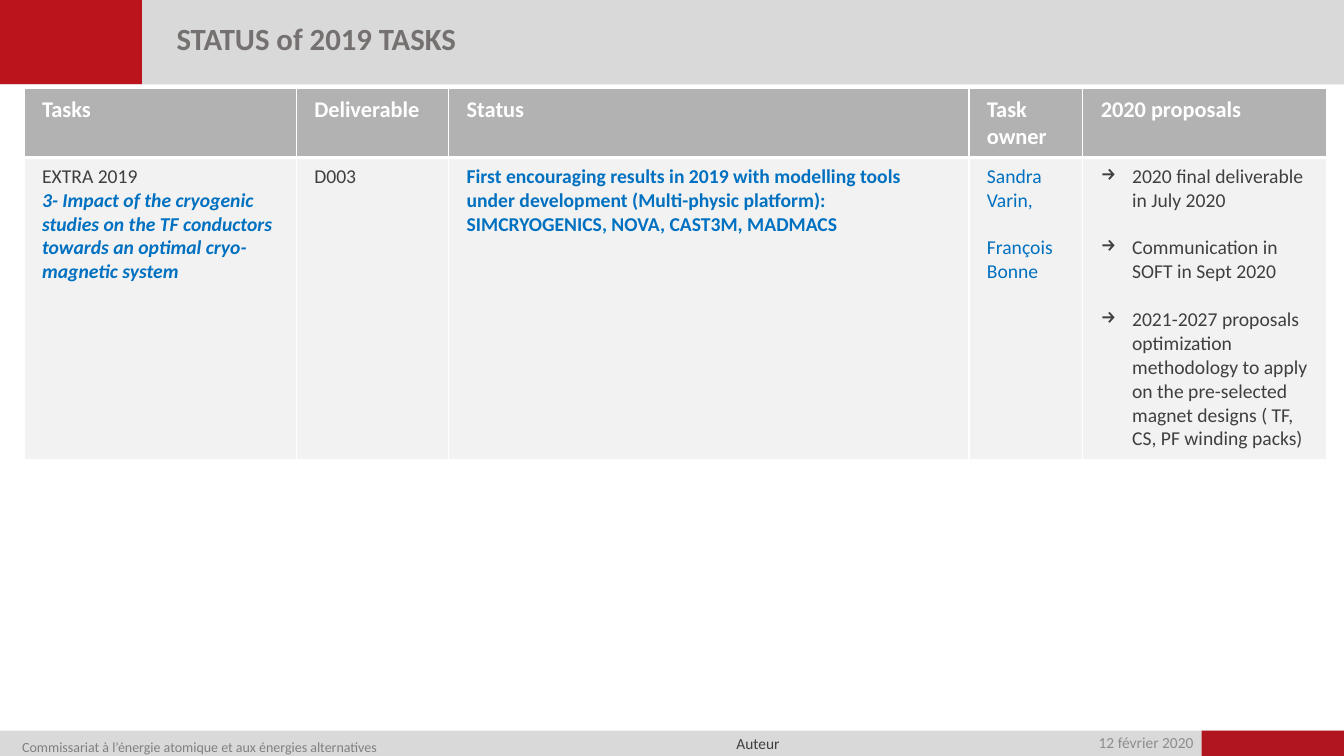
"""Build the status slide for the 2019 tasks."""
from dataclasses import dataclass, field
from typing import Any

from lxml.etree import SubElement
from pptx import Presentation
from pptx.dml.color import RGBColor
from pptx.enum.shapes import MSO_SHAPE as Preset
from pptx.enum.text import MSO_ANCHOR as Anchor, PP_ALIGN as Align
from pptx.oxml import parse_xml
from pptx.oxml.ns import nsdecls, qn
from pptx.util import Cm, Pt

FONT = "Calibri"
WIDTH = 33.87
FOOTER_TOP = 18.41
FOOTER_HEIGHT = 0.66
GREY, DARK, BLUE, WHITE = "D9D9D9", "3F3F3F", "0070C0", "FFFFFF"
COLUMN_WIDTHS = [6.86, 3.84, 13.11, 2.87, 6.15]
ROW_HEIGHTS = [1.73, 7.6]
BLANK_LINE = 17.1


@dataclass
class Para:
    text: str
    size: float = 14
    color: str = DARK
    font: dict[str, Any] = field(default_factory=dict)
    layout: dict[str, Any] = field(default_factory=dict)
    bullet: str = ""


@dataclass
class Bar:
    left: float
    top: float
    width: float
    height: float
    color: str


@dataclass
class Label:
    left: float
    top: float
    width: float
    height: float
    para: Para
    margins: tuple[float, float] = (0.2, 0)
    frame: dict[str, Any] = field(default_factory=dict)


BARS = [
    Bar(0, FOOTER_TOP, WIDTH, FOOTER_HEIGHT, GREY),
    Bar(0, 0, WIDTH, 2.13, GREY),
    Bar(30.28, FOOTER_TOP, 3.59, FOOTER_HEIGHT, "B1151F"),
    Bar(0, 0, 3.58, 2.12, "BC141C"),
]

LABELS = [
    Label(24.41, 18.52, 5.87, 0.43,
          Para("12 février 2020", 11, "8C8C8C",
               layout={"alignment": Align.RIGHT, "line_spacing": 0.9})),
    Label(0.36, 18.44, 15.32, 0.53,
          Para("Commissariat à l’énergie atomique et aux énergies alternatives",
               10, "808080", layout={"line_spacing": 1.4})),
    Label(18.36, 18.49, 1.5, 0.48, Para("Auteur", 11), frame={"word_wrap": False}),
    Label(4.09, 0.53, 16.31, 1.04,
          Para("STATUS of 2019 TASKS", 22, "767171", {"bold": True},
               {"line_spacing": 0.8}),
          (0.36, 0.13), {"vertical_anchor": Anchor.MIDDLE}),
]

HEADINGS = ["Tasks", "Deliverable", "Status", "Task owner", "2020 proposals"]
PROPOSALS = [
    "2020 final deliverable in July 2020",
    "Communication in SOFT in Sept 2020",
    "2021-2027 proposals optimization methodology to apply on the pre-selected "
    "magnet designs ( TF, CS, PF winding packs)",
]
GAP_ABOVE = {"space_before": Pt(BLANK_LINE)}

ROWS = [
    [[Para(heading, 16, WHITE, {"bold": True})] for heading in HEADINGS],
    [
        [Para("EXTRA 2019"),
         Para("3- Impact of the cryogenic studies on the TF conductors towards "
              "an optimal cryo-magnetic system", color=BLUE,
              font={"bold": True, "italic": True})],
        [Para("D003")],
        [Para("First encouraging results in 2019 with modelling tools under "
              "development (Multi-physic platform): SIMCRYOGENICS, NOVA, "
              "CAST3M, MADMACS", color=BLUE, font={"bold": True})],
        [Para("Sandra Varin,", color=BLUE),
         Para("François Bonne", color=BLUE, layout=GAP_ABOVE)],
        [Para(text, layout=GAP_ABOVE if index else {}, bullet="→")
         for index, text in enumerate(PROPOSALS)],
    ],
]
ROW_FILLS = ["B2B2B2", "F2F2F2"]
ROW_BORDERS = [
    {"lnL": 1, "lnR": 1, "lnT": 1, "lnB": 3},
    {"lnL": 1, "lnR": 1, "lnT": 3, "lnB": 1},
]


def rgb(color: str) -> RGBColor:
    """Turn a hex string into a colour."""
    return RGBColor.from_string(color)


def assign(target: Any, values: dict[str, Any]) -> None:
    """Set each named attribute on the target."""
    for name, value in values.items():
        setattr(target, name, value)


def write(frame: Any, paras: list[Para]) -> None:
    """Fill a text frame with paragraphs."""
    for index, item in enumerate(paras):
        para = frame.add_paragraph() if index else frame.paragraphs[0]
        assign(para, item.layout)
        if item.bullet:
            properties = para._p.get_or_add_pPr()
            properties.set("marL", str(Cm(0.79)))
            properties.set("indent", str(-Cm(0.79)))
            SubElement(properties, qn("a:buChar"), char=item.bullet)
        span = para.add_run()
        span.text = item.text
        assign(span.font, {"name": FONT, "size": Pt(item.size), **item.font})
        span.font.color.rgb = rgb(item.color)


def draw_bar(page: Any, bar: Bar) -> None:
    """Draw a plain coloured band."""
    shape = page.shapes.add_shape(Preset.RECTANGLE, Cm(bar.left), Cm(bar.top),
                                  Cm(bar.width), Cm(bar.height))
    shape.shadow.inherit = False
    shape.fill.solid()
    shape.fill.fore_color.rgb = rgb(bar.color)
    shape.line.fill.background()


def draw_label(page: Any, label: Label) -> None:
    """Draw a single-paragraph text box."""
    box = page.shapes.add_textbox(Cm(label.left), Cm(label.top),
                                  Cm(label.width), Cm(label.height))
    side, edge = map(Cm, label.margins)
    assign(box.text_frame, {"word_wrap": True, "margin_left": side,
                            "margin_right": side, "margin_top": edge,
                            "margin_bottom": edge, **label.frame})
    write(box.text_frame, [label.para])


def set_borders(cell: Any, borders: dict[str, float]) -> None:
    """Give a cell white borders of the given point widths."""
    properties = cell._tc.get_or_add_tcPr()
    for index, (side, width) in enumerate(borders.items()):
        properties.insert(index, parse_xml(
            f'<a:{side} {nsdecls("a")} w="{Pt(width)}"><a:solidFill>'
            f'<a:srgbClr val="{WHITE}"/></a:solidFill></a:{side}>'))


def draw_table(page: Any) -> None:
    """Draw the task table."""
    table = page.shapes.add_table(
        len(ROWS), len(COLUMN_WIDTHS), Cm(0.61), Cm(2.24),
        Cm(sum(COLUMN_WIDTHS)), Cm(sum(ROW_HEIGHTS))).table
    table.horz_banding = False
    for column, width in zip(table.columns, COLUMN_WIDTHS):
        column.width = Cm(width)
    for row, height, contents, fill, borders in zip(
            table.rows, ROW_HEIGHTS, ROWS, ROW_FILLS, ROW_BORDERS):
        row.height = Cm(height)
        for cell, paras in zip(row.cells, contents):
            assign(cell, {"margin_left": Cm(0.45), "margin_right": Cm(0.45),
                          "margin_top": Cm(0.18), "margin_bottom": Cm(0.18)})
            cell.fill.solid()
            cell.fill.fore_color.rgb = rgb(fill)
            set_borders(cell, borders)
            write(cell.text_frame, paras)


def main() -> None:
    """Assemble and save the deck."""
    deck = Presentation()
    assign(deck, {"slide_width": Cm(WIDTH), "slide_height": Cm(19.05)})
    page = deck.slides.add_slide(deck.slide_layouts[6])
    for bar in BARS:
        draw_bar(page, bar)
    for label in LABELS:
        draw_label(page, label)
    draw_table(page)
    deck.save("out.pptx")


if __name__ == "__main__":
    main()
